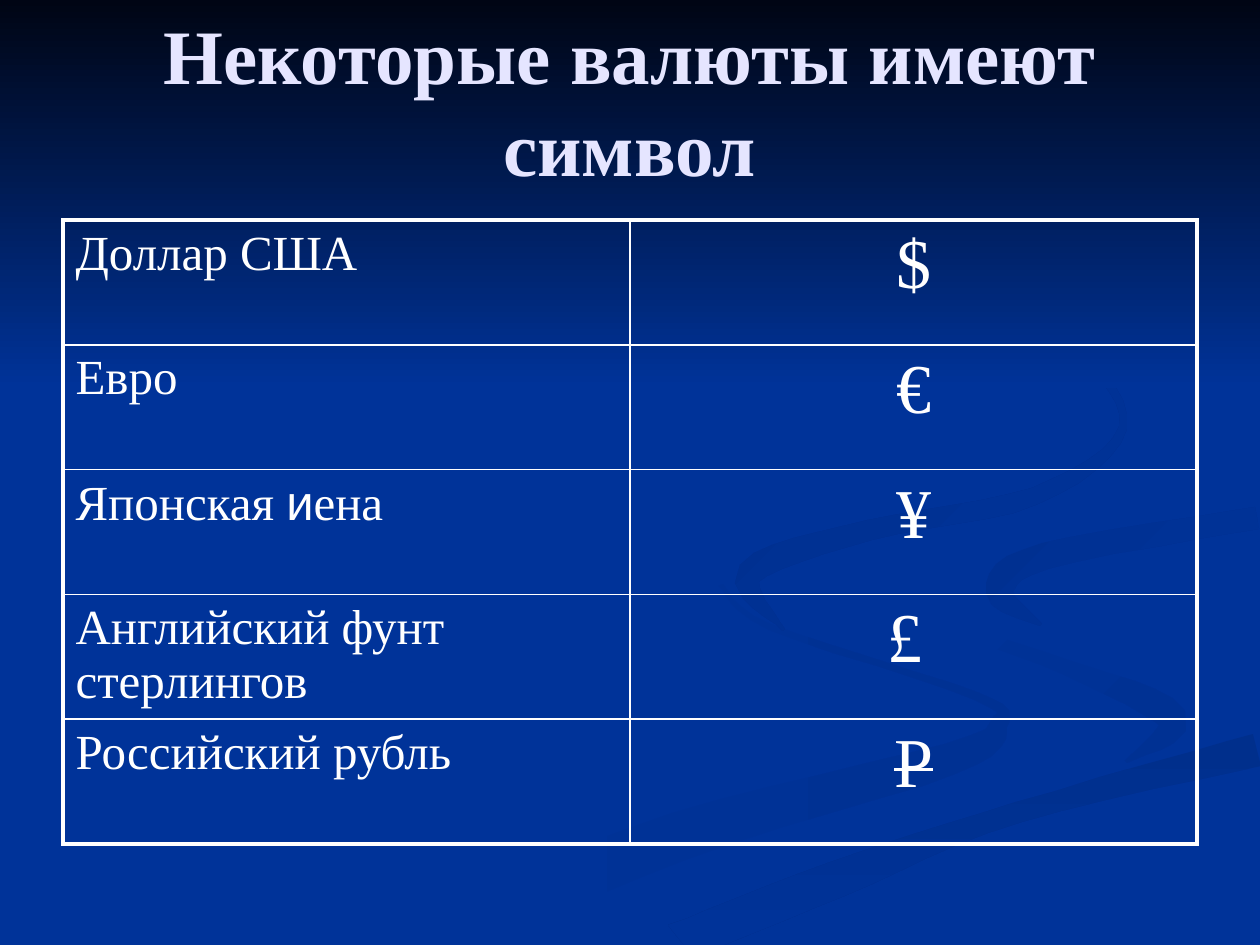
from math import hypot

from pptx import Presentation
from pptx.dml.color import RGBColor
from pptx.enum.shapes import MSO_SHAPE
from pptx.enum.text import MSO_ANCHOR, MSO_AUTO_SIZE, PP_ALIGN
from pptx.oxml import parse_xml
from pptx.oxml.ns import nsdecls
from pptx.util import Pt

PX = 914400 / 126
CENTER, LEFT = PP_ALIGN.CENTER, PP_ALIGN.LEFT
MIDDLE, FIXED = MSO_ANCHOR.MIDDLE, MSO_AUTO_SIZE.NONE
RECT = MSO_SHAPE.RECTANGLE
SERIF, SANS = "Times New Roman", "Arial"
BLUE, WHITE, LILAC, NIGHT = "003399", "FFFFFF", "E5E5FF", "000514"

TITLE = "Некоторые валюты имеют символ"
TITLE_BOX = (63, 21, 1134, 158)
TABLE_BOX = (63, 220, 1134, 624)
SKY_BOX = (0, 0, 1260, 388)
THIN, THICK = 1, 2.25
STEPS = 6

# Each name is a list of (text, font) runs; each sign has a strike flag.
MONEY = [
    ([("Доллар США", SERIF)], "$", False),
    ([("Евро", SERIF)], "€", False),
    ([("Японская ", SERIF), ("и", SANS), ("ена", SERIF)], "¥", False),
    ([("Английский фунт стерлингов", SERIF)], "£ ", False),
    ([("Российский рубль", SERIF)], "Р", True),
]

# First colour, last colour, clockwise angle, spine of (x, y, half width).
WAVES = [
    (BLUE, "003193", 0, [
        (721, 585, 2), (770, 627, 3), (976, 696, 4), (999, 724, 9),
        (950, 759, 16), (680, 836, 24), (417, 944, 30)]),
    (BLUE, "003193", 45, [
        (912, 585, 1), (932, 618, 4), (1065, 667, 8), (1172, 718, 15),
        (1126, 762, 1)]),
    ("002F8C", BLUE, 90, [
        (676, 944, 20), (835, 880, 18), (1019, 812, 10), (1257, 750, 17)]),
    ("003091", BLUE, 45, [
        (1041, 625, 1), (1000, 592, 14), (1045, 556, 13), (1257, 518, 11)]),
    ("002F8E", BLUE, 45, [
        (960, 294, 1), (1075, 350, 4), (1123, 428, 4), (1035, 496, 9),
        (870, 530, 10), (750, 573, 13), (784, 630, 1)]),
]


def px(n):
    return round(n * PX)


def rgb(code):
    return RGBColor.from_string(code)


def smooth(knots):
    """Run a Catmull-Rom curve through the knots."""
    ends = [knots[0], *knots, knots[-1]]
    curve = []
    for group in zip(ends, ends[1:], ends[2:], ends[3:]):
        for step in range(STEPS):
            t = step / STEPS
            curve.append([
                b + t * (c - a + t * (2 * a - 5 * b + 4 * c - d
                                      + t * (3 * b - a - 3 * c + d))) / 2
                for a, b, c, d in zip(*group)])
    return curve + [knots[-1]]


def ribbon(knots):
    """Outline a band that follows the smoothed spine."""
    spine = smooth(knots)
    one, two = [], []
    for prev, (x, y, half), after in zip(
            spine[:1] + spine, spine, spine[1:] + spine[-1:]):
        dx, dy = after[0] - prev[0], after[1] - prev[1]
        size = hypot(dx, dy)
        nx, ny = -dy / size * half, dx / size * half
        one.append((x + nx, min(y + ny, 945)))
        two.append((x - nx, min(y - ny, 945)))
    return one + two[::-1]


def shade(shape, first, last, angle):
    shape.shadow.inherit = False
    shape.line.fill.background()
    shape.fill.gradient()
    shape.fill.gradient_angle = -angle % 360
    for stop, code, spot in zip(shape.fill.gradient_stops, (first, last), (0, 1)):
        stop.color.rgb = rgb(code)
        stop.position = spot


def add_back(shapes):
    for first, last, angle, knots in WAVES:
        dots = ribbon(knots)
        pen = shapes.build_freeform(*dots[0], scale=PX)
        pen.add_line_segments(dots[1:], close=True)
        shade(pen.convert_to_shape(), first, last, angle)
    shade(shapes.add_shape(RECT, *map(px, SKY_BOX)), NIGHT, BLUE, 90)


def write(frame, runs, size, color, align, bold=False, strike=False):
    par = frame.paragraphs[0]
    par.alignment = align
    for text, face in runs:
        run = par.add_run()
        run.text = text
        look = {"name": face, "size": Pt(size), "bold": bold}
        for key, value in look.items():
            setattr(run.font, key, value)
        run.font.color.rgb = rgb(color)
        if strike:
            run._r.get_or_add_rPr().set("strike", "sngStrike")


def set_edges(cell, outer):
    """Draw the four borders; sides named in outer are thick."""
    props = cell._tc.get_or_add_tcPr()
    for side in "LRTB":
        width = Pt(THICK if side in outer else THIN)
        props.append(parse_xml(
            f'<a:ln{side} {nsdecls("a")} w="{width}"><a:solidFill>'
            f'<a:srgbClr val="{WHITE}"/></a:solidFill></a:ln{side}>'))
    cell.fill.background()


def add_money(shapes):
    count = len(MONEY)
    grid = shapes.add_table(count, 2, *map(px, TABLE_BOX)).table
    grid.first_row = grid.horz_banding = False
    for r, (name, sign, strike) in enumerate(MONEY):
        ends = ("T" if r == 0 else "") + ("B" if r == count - 1 else "")
        left, right = grid.cell(r, 0), grid.cell(r, 1)
        write(left.text_frame, name, 28, WHITE, LEFT)
        write(right.text_frame, [(sign, SERIF)], 40, WHITE, CENTER, strike=strike)
        set_edges(left, ends + "L")
        set_edges(right, ends + "R")


def add_title(shapes):
    title = shapes.title
    shapes._spTree.append(title._element)  # in front of the backdrop
    for key, value in zip(("left", "top", "width", "height"), TITLE_BOX):
        setattr(title, key, px(value))
    frame = title.text_frame
    form = {"word_wrap": True, "auto_size": FIXED, "vertical_anchor": MIDDLE}
    for key, value in form.items():
        setattr(frame, key, value)
    write(frame, [(TITLE, SERIF)], 44, LILAC, CENTER, bold=True)


def main():
    deck = Presentation()
    deck.slide_width, deck.slide_height = px(1260), px(945)
    slide = deck.slides.add_slide(deck.slide_layouts[5])
    back = slide.background.fill
    back.solid()
    back.fore_color.rgb = rgb(BLUE)
    for add in (add_back, add_title, add_money):
        add(slide.shapes)
    deck.save("out.pptx")


if __name__ == "__main__":
    main()
